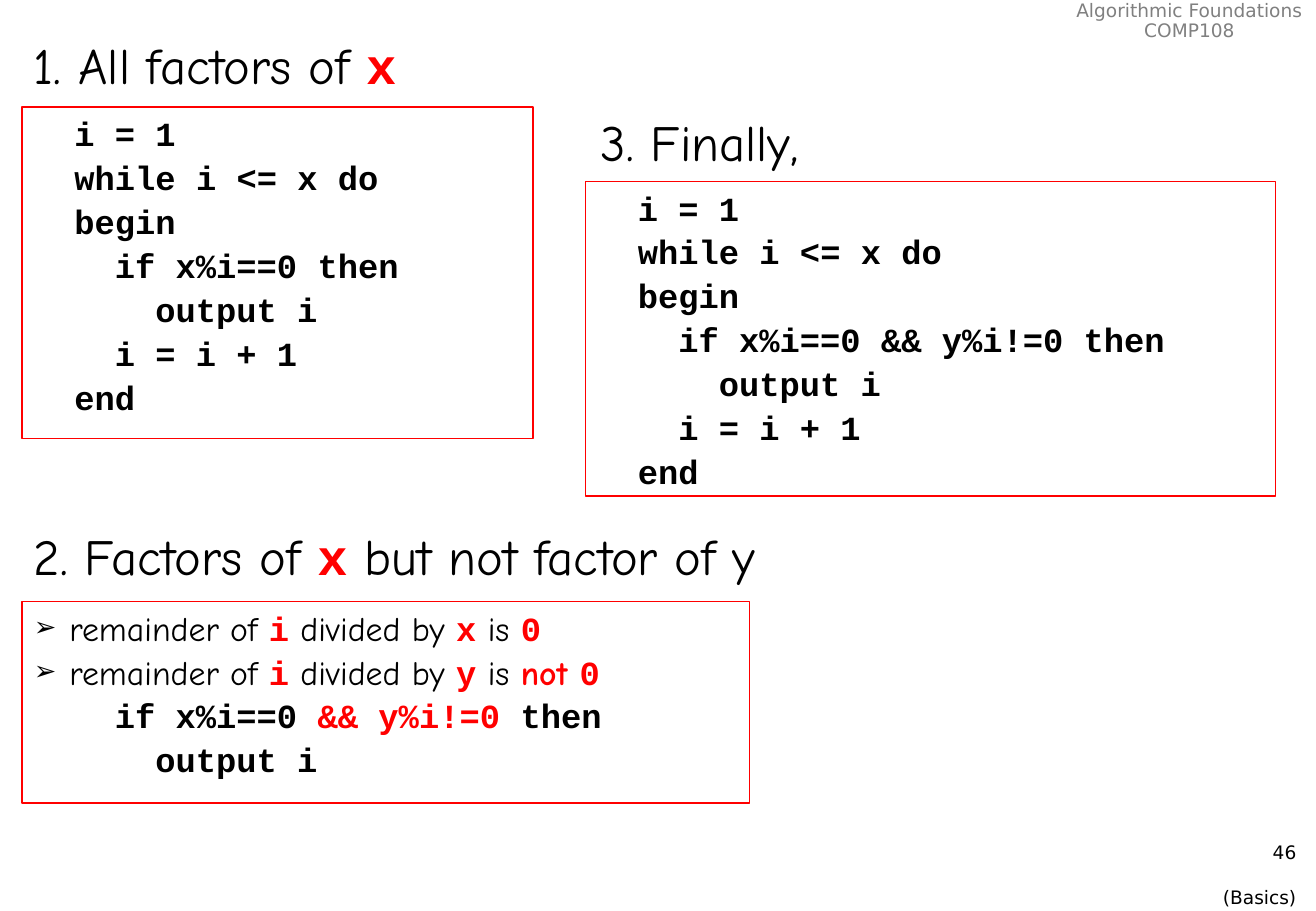
"""Build the slide on finding factors of x that are not factors of y."""
import pptx
import pptx.dml.color
import pptx.enum.shapes
import pptx.enum.text
import pptx.util
from lxml import etree

Pt = pptx.util.Pt
RGB = pptx.dml.color.RGBColor
ALIGN = pptx.enum.text.PP_ALIGN
BLACK, RED, GREY = RGB(0, 0, 0), RGB(255, 0, 0), RGB(128, 128, 128)

PROSE = ("Comic Neue", BLACK, False)
STRESS = ("Comic Neue", RED, True)
CODE = ("Courier New", BLACK, True)
VAR = ("Courier New", RED, True)
HEADER = ("DejaVu Sans", GREY, False)
FOOTER = ("DejaVu Sans", BLACK, False)

CODE_SIZE = 20
CHAR_WIDTH = 0.6 * CODE_SIZE
LINE_GAP = 0.1 * CODE_SIZE
BULLET_INDENT = 21

HEADINGS = [
    ((13, 16.5, 695, 44), [("1. All factors of ", PROSE), ("x", VAR)]),
    ((13, 307.5, 695, 44), [("2. Factors of ", PROSE), ("x", VAR),
                            (" but not factor of y", PROSE)]),
    ((349, 62, 341, 44), [("3. Finally,", PROSE)]),
]


def factor_loop(condition):
    lines = [(2, "i = 1"), (2, "while i <= x do"), (2, "begin"),
             (4, f"if {condition} then"), (6, "output i"),
             (4, "i = i + 1"), (2, "end")]
    return [(chars, [(text, CODE)]) for chars, text in lines]


def remainder_rule(divisor, result):
    return (None, [("remainder of ", PROSE), ("i", VAR), (" divided by ", PROSE),
                   (divisor, VAR), (" is ", PROSE), *result])


BOXES = [
    ((13, 63.5, 303, 196.5), factor_loop("x%i==0")),
    ((13, 356.5, 431.5, 119.5), [
        remainder_rule("x", [("0", VAR)]),
        remainder_rule("y", [("not ", STRESS), ("0", VAR)]),
        (4, [("if x%i==0 ", CODE), ("&& y%i!=0", VAR), (" then", CODE)]),
        (6, [("output i", CODE)]),
    ]),
    ((347, 107.5, 409, 186.5), factor_loop("x%i==0 && y%i!=0")),
]


def add_text(tf, runs, first=False, size=CODE_SIZE, align=ALIGN.LEFT,
             before=0, spacing=None, margin=0, bullet=None):
    p = tf.paragraphs[0] if first else tf.add_paragraph()
    p.alignment = align
    p.space_before = Pt(before)
    if spacing:
        p.line_spacing = spacing
    pPr = p._p.get_or_add_pPr()
    pPr.set("marL", str(Pt(margin)))
    pPr.set("indent", str(Pt(-margin if bullet else 0)))
    if bullet:
        for tag, name, value in (("buSzPct", "val", "80000"),
                                 ("buFont", "typeface", "DejaVu Sans"),
                                 ("buChar", "char", bullet)):
            etree.SubElement(pPr, pptx.oxml.ns.qn(f"a:{tag}")).set(name, value)
    for text, (font, color, bold) in runs:
        r = p.add_run()
        r.text = text
        r.font.name, r.font.size, r.font.bold = font, Pt(size), bold
        r.font.color.rgb = color


def add_label(slide, place, wrap=True):
    tf = slide.shapes.add_textbox(*map(Pt, place)).text_frame
    tf.word_wrap = wrap
    return tf


def add_box(slide, place):
    kind = pptx.enum.shapes.MSO_SHAPE.RECTANGLE
    sp = slide.shapes.add_shape(kind, *map(Pt, place))
    sp.shadow.inherit = False
    sp.fill.background()
    sp.line.color.rgb = RED
    sp.line.width = Pt(0.75)
    tf = sp.text_frame
    tf.word_wrap = True
    tf.vertical_anchor = pptx.enum.text.MSO_ANCHOR.TOP
    return tf


def main():
    prs = pptx.Presentation()
    prs.slide_width, prs.slide_height = Pt(780), Pt(540)
    slide = prs.slides.add_slide(prs.slide_layouts[6])

    tf = add_label(slide, (630, -2.5, 150, 31), wrap=False)
    for n, text in enumerate(["Algorithmic Foundations", "COMP108"]):
        add_text(tf, [(text, HEADER)], first=n == 0, size=11,
                 align=ALIGN.CENTER, spacing=0.9)

    tf = add_label(slide, (612.5, 495, 163, 36))
    for n, text in enumerate(["46", "(Basics)"]):
        add_text(tf, [(text, FOOTER)], first=n == 0, size=11,
                 align=ALIGN.RIGHT, before=13.5 * n)

    for place, runs in HEADINGS:
        add_text(add_label(slide, place), runs, first=True, size=30)

    for place, lines in BOXES:
        tf = add_box(slide, place)
        for n, (chars, runs) in enumerate(lines):
            bullet = "➢" if chars is None else None
            margin = BULLET_INDENT if bullet else chars * CHAR_WIDTH
            add_text(tf, runs, first=n == 0, before=LINE_GAP,
                     margin=margin, bullet=bullet)

    prs.save("out.pptx")


if __name__ == "__main__":
    main()
